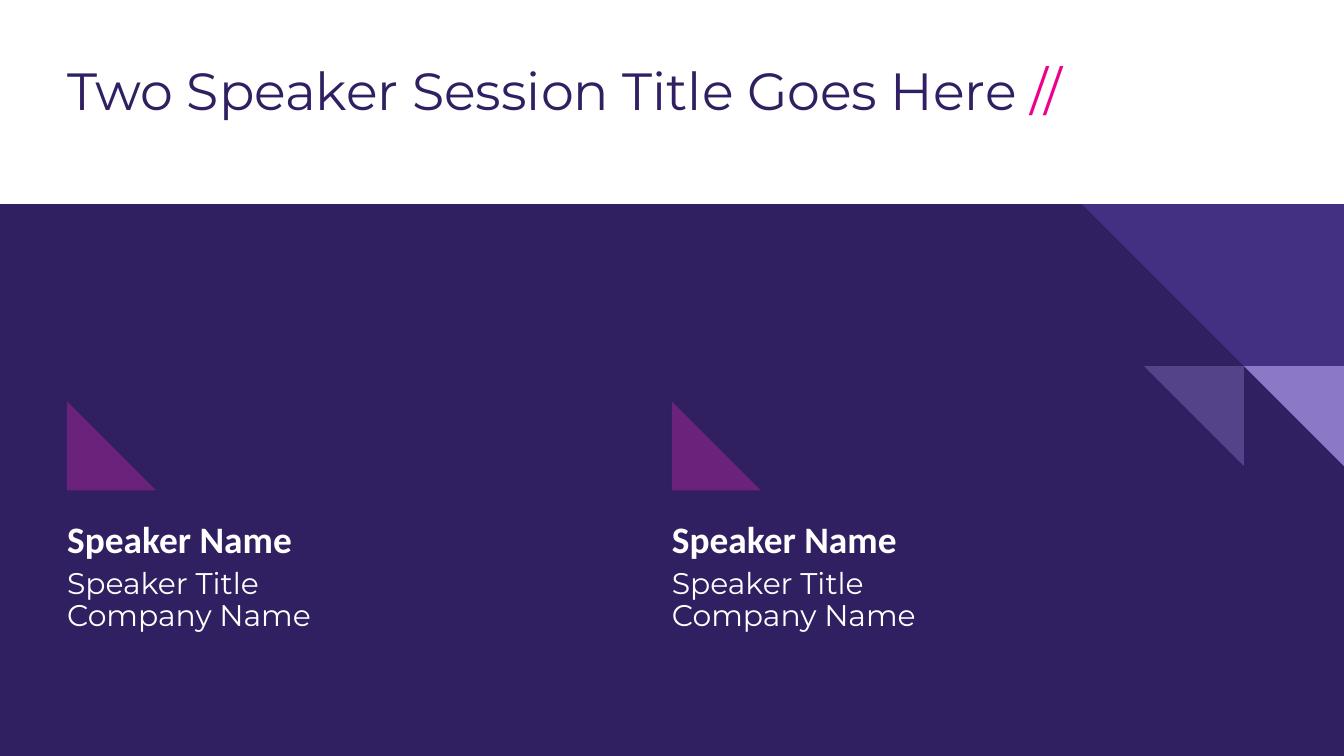
from lxml import etree
from pptx import Presentation
from pptx.dml.color import RGBColor
from pptx.enum.shapes import MSO_SHAPE
from pptx.enum.text import MSO_ANCHOR
from pptx.oxml.ns import qn
from pptx.util import Cm, Pt

RECTANGLE = MSO_SHAPE.RECTANGLE
TRIANGLE = MSO_SHAPE.RIGHT_TRIANGLE
TOP = MSO_ANCHOR.TOP

INDIGO = RGBColor(0x30, 0x20, 0x61)
PINK = RGBColor(0xEC, 0x00, 0x8C)
PLUM = RGBColor(0x7B, 0x23, 0x83)
VIOLET = RGBColor(0x6F, 0x53, 0xC6)
LAVENDER = RGBColor(0x9F, 0x8C, 0xD9)
WHITE = RGBColor(0xFF, 0xFF, 0xFF)

# Content
TITLE = [("Two Speaker Session Title Goes Here", INDIGO), (" //", PINK)]
SPEAKERS = [
    ("Speaker Name", "Speaker Title\nCompany Name"),
    ("Speaker Name", "Speaker Title\nCompany Name"),
]

# Layout, in centimetres
WIDTH, HEIGHT = 25.4, 14.29
MARGIN = 1.27
BAND_TOP = 3.86
COLUMN_STEP = WIDTH / 2 - MARGIN
MARKER_TOP, MARKER_SIZE = 7.59, 1.68
SPEAKER_TOP, SPEAKER_WIDTH, SPEAKER_HEIGHT = 9.73, 10.29, 3.3
CORNER_SIZE, SMALL_SIZE = 4.95, 1.89


def add_block(page, kind, left, top, width, height, color, opacity=100, rotation=0):
    block = page.shapes.add_shape(kind, Cm(left), Cm(top), Cm(width), Cm(height))
    block.shadow.inherit = False
    block.rotation = rotation
    block.line.fill.background()
    block.fill.solid()
    block.fill.fore_color.rgb = color
    if opacity < 100:
        fill_color = block._element.spPr.find(qn("a:solidFill"))[0]
        etree.SubElement(fill_color, qn("a:alpha"), val=str(opacity * 1000))


def add_text_frame(page, left, top, width, height):
    box = page.shapes.add_textbox(Cm(left), Cm(top), Cm(width), Cm(height))
    frame = box.text_frame
    frame.word_wrap = True
    frame.vertical_anchor = TOP
    frame.margin_left = frame.margin_right = 0
    return frame


def style_paragraph(para, font_name, size, color, bold=False):
    para.line_spacing = 0.9
    for span in para.runs:
        span.font.name = font_name
        span.font.size = Pt(size)
        span.font.bold = bold
        span.font.color.rgb = color
    # Line breaks take the same size as the text
    for line_break in para._p.findall(qn("a:br")):
        etree.SubElement(line_break, qn("a:rPr"), sz=str(size * 100))


deck = Presentation()
deck.slide_width, deck.slide_height = Cm(WIDTH), Cm(HEIGHT)
page = deck.slides.add_slide(deck.slide_layouts[6])

# Dark band
add_block(page, RECTANGLE, 0, BAND_TOP, WIDTH, HEIGHT - BAND_TOP, INDIGO)

# Title
para = add_text_frame(page, MARGIN, 1.12, WIDTH - 2 * MARGIN, 2.29).paragraphs[0]
for words, color in TITLE:
    para.add_run().text = words
style_paragraph(para, "Montserrat", 28, INDIGO)
for span, (words, color) in zip(para.runs, TITLE):
    span.font.color.rgb = color

# Speakers, each with a triangle marker
for column, (name, role) in enumerate(SPEAKERS):
    left = MARGIN + column * (COLUMN_STEP)
    add_block(page, TRIANGLE, left, MARKER_TOP, MARKER_SIZE, MARKER_SIZE, PLUM, 79)
    frame = add_text_frame(page, left, SPEAKER_TOP, SPEAKER_WIDTH, SPEAKER_HEIGHT)
    name_para = frame.paragraphs[0]
    name_para.text = name
    style_paragraph(name_para, "Calibri", 20, WHITE, bold=True)
    role_para = frame.add_paragraph()
    role_para.text = role
    role_para.space_before, role_para.space_after = Pt(3.8), Pt(10)
    style_paragraph(role_para, "Montserrat", 16, WHITE)

# Corner triangles: the small ones share the bottom line of the large one
small_top = BAND_TOP + CORNER_SIZE - SMALL_SIZE
for left, top, size, color, opacity in [
    (WIDTH - CORNER_SIZE, BAND_TOP, CORNER_SIZE, VIOLET, 33),
    (WIDTH - SMALL_SIZE, small_top, SMALL_SIZE, LAVENDER, 79),
    (WIDTH - 2 * SMALL_SIZE, small_top, SMALL_SIZE, LAVENDER, 33),
]:
    add_block(page, TRIANGLE, left, top, size, size, color, opacity, rotation=180)

deck.save("out.pptx")
